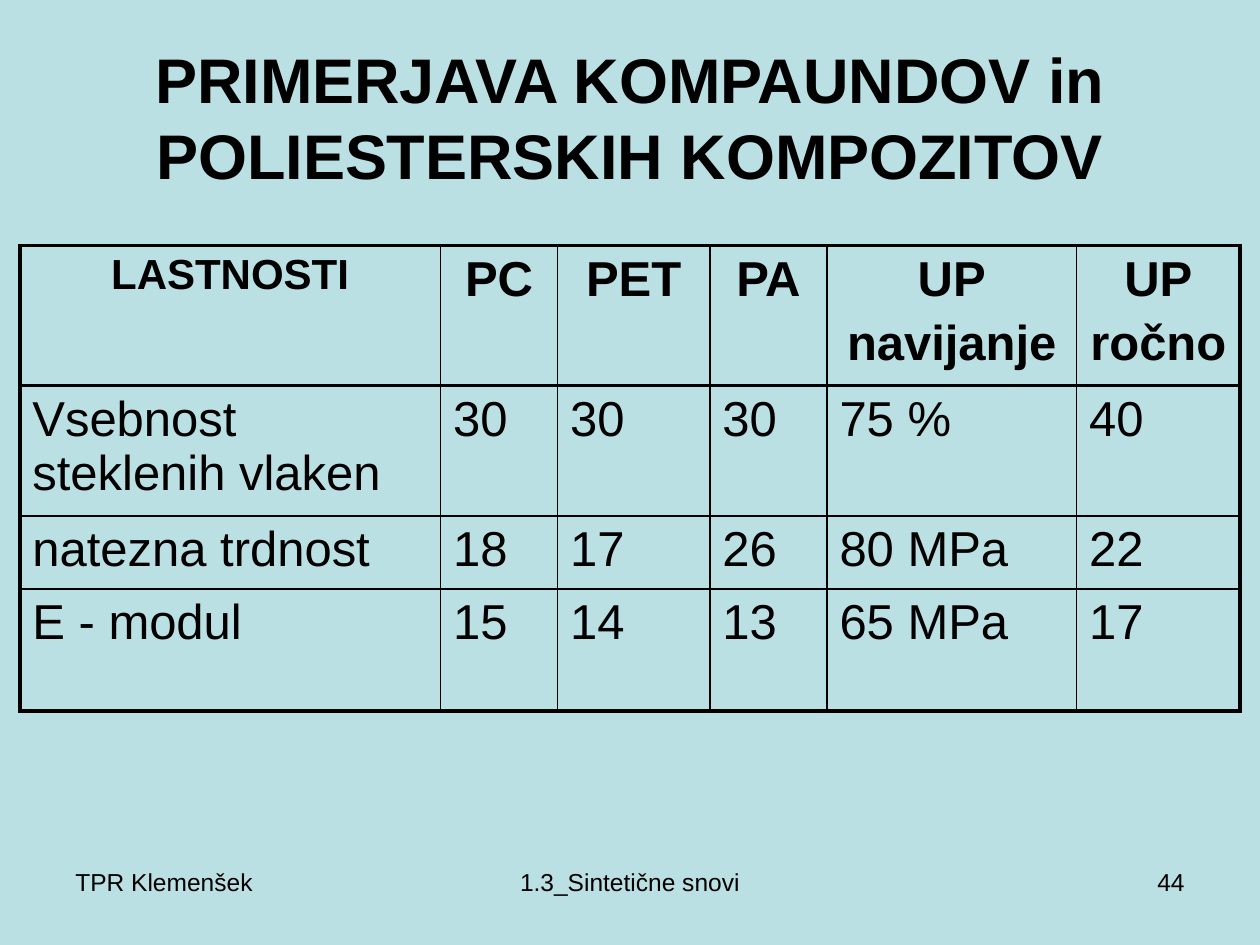
"""Builds a slide comparing compounds and polyester composites."""
from dataclasses import dataclass

from lxml import etree
from pptx import Presentation
from pptx.dml.color import RGBColor
from pptx.enum.text import MSO_ANCHOR, PP_ALIGN
from pptx.oxml.ns import qn
from pptx.util import Cm, Pt

LEFT, CENTER, RIGHT = PP_ALIGN.LEFT, PP_ALIGN.CENTER, PP_ALIGN.RIGHT
TOP, MIDDLE = MSO_ANCHOR.TOP, MSO_ANCHOR.MIDDLE


@dataclass(frozen=True)
class Theme:
    """Colours, font, type sizes and line widths of the slide."""
    background: str = "BBE0E3"
    ink: str = "000000"
    font: str = "Arial"
    title: float = 36
    cell: float = 28
    label: float = 24
    footer: float = 14
    thick: float = 2.25
    thin: float = 1


THEME = Theme()
HEADER = ["LASTNOSTI", "PC", "PET", "PA", "UP\nnavijanje", "UP\nročno"]
ROWS = [
    ["Vsebnost\vsteklenih vlaken", "30", "30", "30", "75 %", "40"],
    ["natezna trdnost", "18", "17", "26", "80 MPa", "22"],
    ["E - modul", "15", "14", "13", "65 MPa", "17"],
]
COLUMN_WIDTHS = [8.48, 2.36, 3.07, 2.36, 5.03, 3.3]
ROW_HEIGHTS = [2.66, 2.44, 1.47, 2.46]


def format_text(frame, size, align, bold=False, gap=0):
    """Format every paragraph and run of a text frame."""
    for para in frame.paragraphs:
        para.alignment = align
        para.space_before = Pt(gap)
        for span in para.runs:
            span.font.name = THEME.font
            span.font.size = Pt(size)
            span.font.bold = bold
            span.font.color.rgb = RGBColor.from_string(THEME.ink)


def add_text(page, box, text, size, align, bold=False, anchor=TOP):
    """Place a wrapped text box in the given box."""
    frame = page.shapes.add_textbox(*map(Cm, box)).text_frame
    frame.word_wrap = True
    frame.vertical_anchor = anchor
    frame.text = text
    format_text(frame, size, align, bold)


def set_borders(cell, widths):
    """Draw the cell borders from a mapping of side to points."""
    properties = cell._tc.get_or_add_tcPr()
    for side, width in widths.items():
        line = etree.SubElement(properties, qn(f"a:ln{side}"), w=str(Pt(width)))
        fill = etree.SubElement(line, qn("a:solidFill"))
        etree.SubElement(fill, qn("a:srgbClr"), val=THEME.ink)


def add_comparison(page, left, top):
    """Place the property table with its top left corner at a point."""
    data = [HEADER, *ROWS]
    last_row, last_column = len(data) - 1, len(HEADER) - 1
    table = page.shapes.add_table(
        len(data), len(HEADER), Cm(left), Cm(top),
        Cm(sum(COLUMN_WIDTHS)), Cm(sum(ROW_HEIGHTS))).table
    table.first_row = table.horz_banding = False
    for column, width in zip(table.columns, COLUMN_WIDTHS):
        column.width = Cm(width)
    for row, height in zip(table.rows, ROW_HEIGHTS):
        row.height = Cm(height)
    for i, texts in enumerate(data):
        for j, text in enumerate(texts):
            cell = table.cell(i, j)
            cell.text_frame.text = text
            header = i == 0
            size = THEME.label if header and j == 0 else THEME.cell
            format_text(cell.text_frame, size, CENTER if header else LEFT,
                        header, 0.2 * size)
            heavy = {"L": j == 0, "R": j == last_column,
                     "T": i <= 1, "B": i in (0, last_row)}
            set_borders(cell, {side: THEME.thick if is_heavy else THEME.thin
                               for side, is_heavy in heavy.items()})
            cell.fill.background()


def add_footer(page, left, top, width, height):
    """Place author, topic and page number across a strip."""
    side, middle = 5.92, 8.05
    parts = [
        ("TPR Klemenšek", 0, side, LEFT),
        ("1.3_Sintetične snovi", (width - middle) / 2, middle, CENTER),
        ("44", width - side, side, RIGHT),
    ]
    for text, offset, extent, align in parts:
        add_text(page, (left + offset, top, extent, height), text,
                 THEME.footer, align)


def main():
    """Build and save the deck."""
    deck = Presentation()
    deck.slide_width, deck.slide_height = Cm(25.4), Cm(19.05)
    page = deck.slides.add_slide(deck.slide_layouts[6])
    page.background.fill.solid()
    page.background.fill.fore_color.rgb = RGBColor.from_string(THEME.background)
    add_text(page, (1.27, 0.76, 22.86, 3.18),
             "PRIMERJAVA KOMPAUNDOV in POLIESTERSKIH KOMPOZITOV",
             THEME.title, CENTER, True, MIDDLE)
    add_comparison(page, 0.4, 4.95)
    add_footer(page, 1.27, 17.35, 22.86, 1.32)
    deck.save("out.pptx")


if __name__ == "__main__":
    main()
